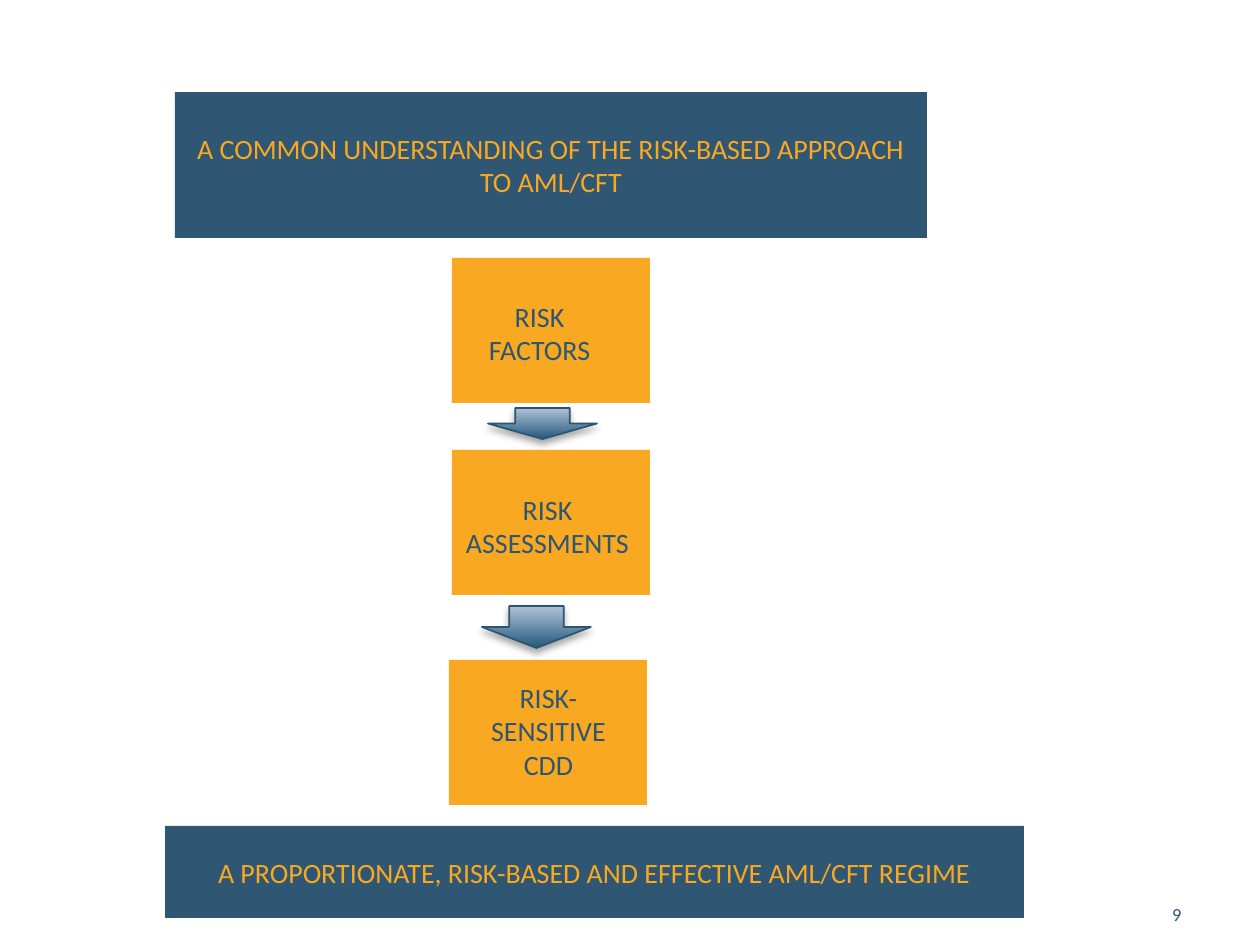
from lxml.etree import SubElement
from pptx import Presentation
from pptx.dml.color import RGBColor
from pptx.enum.shapes import MSO_SHAPE
from pptx.enum.text import MSO_ANCHOR, PP_ALIGN
from pptx.oxml.ns import qn
from pptx.util import Emu, Pt

theme = {
    "font": "Calibri",
    "body": 12,
    "small": 7.9,
    "edge": 0.75,
    "navy": RGBColor.from_string("2F5773"),
    "gold": RGBColor.from_string("F9A822"),
    "ink": RGBColor.from_string("2E5672"),
    "line": RGBColor.from_string("2C5572"),
    "deep": RGBColor.from_string("25597D"),
    "pale": RGBColor.from_string("B1C2D7"),
    "shade": "000000",
}


def px(*nums):
    return [Emu(round(n * 914400 / 168)) for n in nums]


def write(shape, text, size, color, align=PP_ALIGN.CENTER, anchor=MSO_ANCHOR.TOP):
    frame = shape.text_frame
    for name, value in {"word_wrap": True, "vertical_anchor": anchor}.items():
        setattr(frame, name, value)
    para = frame.paragraphs[0]
    para.alignment = align
    run = para.add_run()
    run.text = text
    for name, value in {"name": theme["font"], "size": Pt(theme[size])}.items():
        setattr(run.font, name, value)
    run.font.color.rgb = theme[color]


deck = Presentation()
deck.slide_width, deck.slide_height = px(1260, 945)
slide = deck.slides.add_slide(deck.slide_layouts[6])
shapes = slide.shapes

page = shapes.add_textbox(*px(1090, 895, 108, 30))
write(page, "9", "small", "navy", PP_ALIGN.RIGHT)

bars = [
    ("A PROPORTIONATE, RISK-BASED AND EFFECTIVE AML/CFT REGIME", (165, 826, 859, 92)),
    ("A COMMON UNDERSTANDING OF THE RISK-BASED APPROACH TO AML/CFT", (175, 92, 752, 146)),
]
for text, area in bars:
    bar = shapes.add_shape(MSO_SHAPE.RECTANGLE, *px(*area))
    bar.shadow.inherit = False
    bar.fill.solid()
    bar.fill.fore_color.rgb = theme["navy"]
    bar.line.fill.background()
    write(bar, text, "body", "gold", anchor=MSO_ANCHOR.MIDDLE)

steps = [
    ("RISK FACTORS", (452, 258), (462, 291, 155, 84)),
    ("RISK ASSESSMENTS", (452, 450), (445, 484, 205, 84)),
    ("RISK-SENSITIVE CDD", (449, 660), (471, 672, 155, 119)),
]
for text, spot, area in steps:
    group = shapes.add_group_shape()
    card = group.shapes.add_shape(MSO_SHAPE.RECTANGLE, *px(*spot, 198, 145))
    card.shadow.inherit = False
    card.fill.solid()
    card.fill.fore_color.rgb = theme["gold"]
    card.line.fill.background()
    label = group.shapes.add_textbox(*px(*area))
    write(label, text, "body", "ink")

for area in [(488, 408, 109, 31), (482, 606, 109, 42)]:
    arrow = shapes.add_shape(MSO_SHAPE.DOWN_ARROW, *px(*area))
    arrow.shadow.inherit = False
    arrow.fill.gradient()
    arrow.fill.gradient_angle = 90
    for stop, tone, place in zip(arrow.fill.gradient_stops, ("deep", "pale"), (0, 1)):
        stop.color.rgb = theme[tone]
        stop.position = place
    arrow.line.color.rgb = theme["line"]
    arrow.line.width = Pt(theme["edge"])
    glow = SubElement(
        arrow._element.spPr.find(qn("a:effectLst")),
        qn("a:outerShdw"),
        blurRad=str(Pt(3.1)),
        dist=str(Pt(1.8)),
        dir="5400000",
        rotWithShape="0",
    )
    tint = SubElement(glow, qn("a:srgbClr"), val=theme["shade"])
    SubElement(tint, qn("a:alpha"), val="35000")

deck.save("out.pptx")
